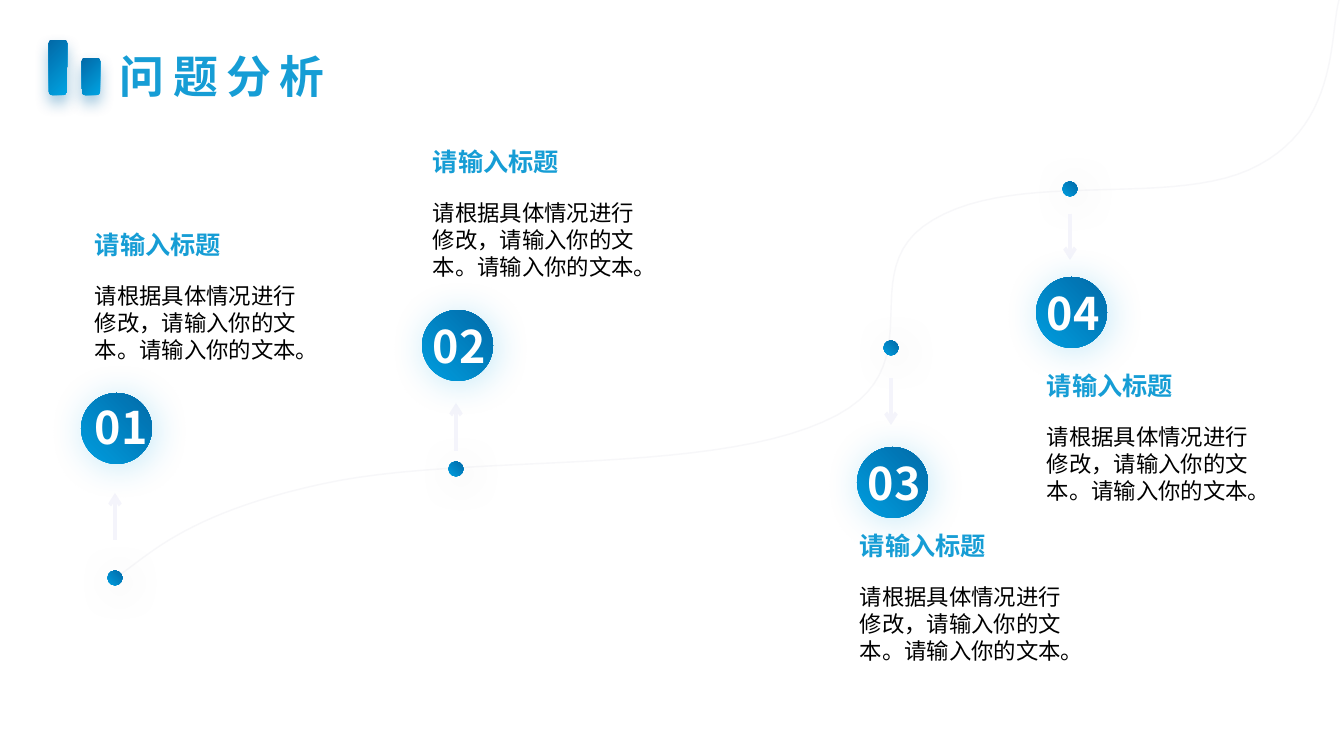
import pptx
import pptx.util
import pptx.dml.color
import pptx.enum.shapes
import pptx.enum.text
import pptx.oxml.ns
from lxml import etree

TITLE = "问题分析"
HEADING = "请输入标题"
BODY = "请根据具体情况进行修改，请输入你的文本。请输入你的文本。"

STEPS = [
    dict(number="01", dot=(115, 578), arrow=(540, 493), circle=(81, 393), label=(85, 395), text=(85, 224)),
    dict(number="02", dot=(456, 469), arrow=(451, 403), circle=(422, 310), label=(423, 314), text=(423, 141)),
    dict(number="03", dot=(891, 348), arrow=(378, 425), circle=(857, 447), label=(858, 451), text=(850, 525)),
    dict(number="04", dot=(1070, 189), arrow=(214, 260), circle=(1036, 277), label=(1037, 281), text=(1037, 365)),
]
BARS = [(49, 40, 18, 55), (82, 58, 18, 37)]
CURVE_START = (1340, -3)
CURVE = [
    ((1329, 29), (1341, 121), (1259, 165)),
    ((1178, 210), (1020, 168), (933, 220)),
    ((846, 271), (944, 370), (823, 422)),
    ((701, 476), (463, 453), (322, 484)),
    ((180, 515), (146, 559), (115, 578)),
]
CURVE_STEPS = 24
DOT, CIRCLE, BODY_DROP = 15, 71, 53

THEME = dict(
    font="Noto Sans CJK SC",
    blue="169DD5", black="000000", white="FFFFFF",
    round_fill=("009EDF", "026AA8", 45),
    bar_fill=("00A3E2", "026AA8", 315),
    dot_shadow=("A6A6A6", 29, 27, 5, 45),
    circle_shadow=("00A3E2", 24, 27, 3, 45),
    bar_shadow=("026AA8", 40, 11, 6, 90),
    curve="F7F7F9", arrow="F4F4FB",
    title_size=32, heading_size=18, body_size=16,
)
SHAPE = pptx.enum.shapes.MSO_SHAPE
SCALE = 12192000 / 1344


def px(n):
    return round(n * SCALE)


def rgb(name):
    return pptx.dml.color.RGBColor.from_string(name)


def sub(parent, tag, **attrs):
    return etree.SubElement(parent, pptx.oxml.ns.qn(tag), {k: str(v) for k, v in attrs.items()})


def add_gradient_shape(s, kind, box, fill, shadow):
    sp = s.shapes.add_shape(kind, *map(px, box))
    sp.line.fill.background()
    sp.fill.gradient()
    start, end, sp.fill.gradient_angle = fill
    for stop, color in zip(sp.fill.gradient_stops, (start, end)):
        stop.color.rgb = rgb(color)
    color, alpha, blur, dist, angle = shadow
    effects = sub(sp._element.spPr, "a:effectLst")
    outer = sub(effects, "a:outerShdw", blurRad=blur * 12700, dist=dist * 12700,
                dir=angle * 60000, algn="ctr", rotWithShape=0)
    sub(sub(outer, "a:srgbClr", val=color), "a:alpha", val=alpha * 1000)
    return sp


def add_text(s, text, box, size, color, bold=True, wrap=False, spacing=0):
    tf = s.shapes.add_textbox(*map(px, box)).text_frame
    tf.word_wrap = wrap
    tf.auto_size = pptx.enum.text.MSO_AUTO_SIZE.SHAPE_TO_FIT_TEXT
    p = tf.paragraphs[0]
    p.text = text
    p.font.size = pptx.util.Pt(size)
    p.font.bold = bold
    p.font.name = THEME["font"]
    p.font.color.rgb = rgb(color)
    props = p._p.pPr.find(pptx.oxml.ns.qn("a:defRPr"))
    sub(props, "a:ea", typeface=THEME["font"])
    if spacing:
        props.set("spc", str(spacing * 100))


def add_curve(s):
    points, start = [], CURVE_START
    for c1, c2, end in CURVE:
        for i in range(1, CURVE_STEPS + 1):
            t = i / CURVE_STEPS
            u = 1 - t
            points.append(tuple(
                px(u**3 * a + 3 * u * u * t * b + 3 * u * t * t * c + t**3 * d)
                for a, b, c, d in zip(start, c1, c2, end)))
        start = end
    builder = s.shapes.build_freeform(*map(px, CURVE_START))
    builder.add_line_segments(points, close=False)
    sp = builder.convert_to_shape()
    sp.shadow.inherit = False
    sp.fill.background()
    sp.line.color.rgb = rgb(THEME["curve"])
    sp.line.width = pptx.util.Pt(1)


def add_arrow(s, x, start, end):
    cx = s.shapes.add_connector(pptx.enum.shapes.MSO_CONNECTOR.STRAIGHT,
                                px(x), px(start), px(x), px(end))
    cx.line.color.rgb = rgb(THEME["arrow"])
    cx.line.width = pptx.util.Pt(2.75)
    sub(cx.line._get_or_add_ln(), "a:tailEnd", type="arrow")
    sub(cx._element.spPr, "a:effectLst")


def add_step(s, step):
    x, y = step["dot"]
    add_gradient_shape(s, SHAPE.OVAL, (x - DOT / 2, y - DOT / 2, DOT, DOT),
                       THEME["round_fill"], THEME["dot_shadow"])
    add_arrow(s, x, *step["arrow"])
    add_gradient_shape(s, SHAPE.OVAL, (*step["circle"], CIRCLE, CIRCLE),
                       THEME["round_fill"], THEME["circle_shadow"])
    add_text(s, step["number"], (*step["label"], 76, 65), THEME["title_size"], THEME["white"])
    x, y = step["text"]
    add_text(s, BODY, (x, y + BODY_DROP, 236, 92), THEME["body_size"], THEME["black"],
             bold=False, wrap=True)
    add_text(s, HEADING, (x, y, 151, 40), THEME["heading_size"], THEME["blue"])


def main():
    prs = pptx.Presentation()
    prs.slide_width, prs.slide_height = px(1344), px(756)
    s = prs.slides.add_slide(prs.slide_layouts[6])
    add_curve(s)
    for step in STEPS:
        add_step(s, step)
    add_text(s, TITLE, (110, 44, 234, 65), THEME["title_size"], THEME["blue"], spacing=6)
    for box in BARS:
        bar = add_gradient_shape(s, SHAPE.ROUNDED_RECTANGLE, box,
                                 THEME["bar_fill"], THEME["bar_shadow"])
        bar.rotation = 180
    prs.save("out.pptx")


if __name__ == "__main__":
    main()
